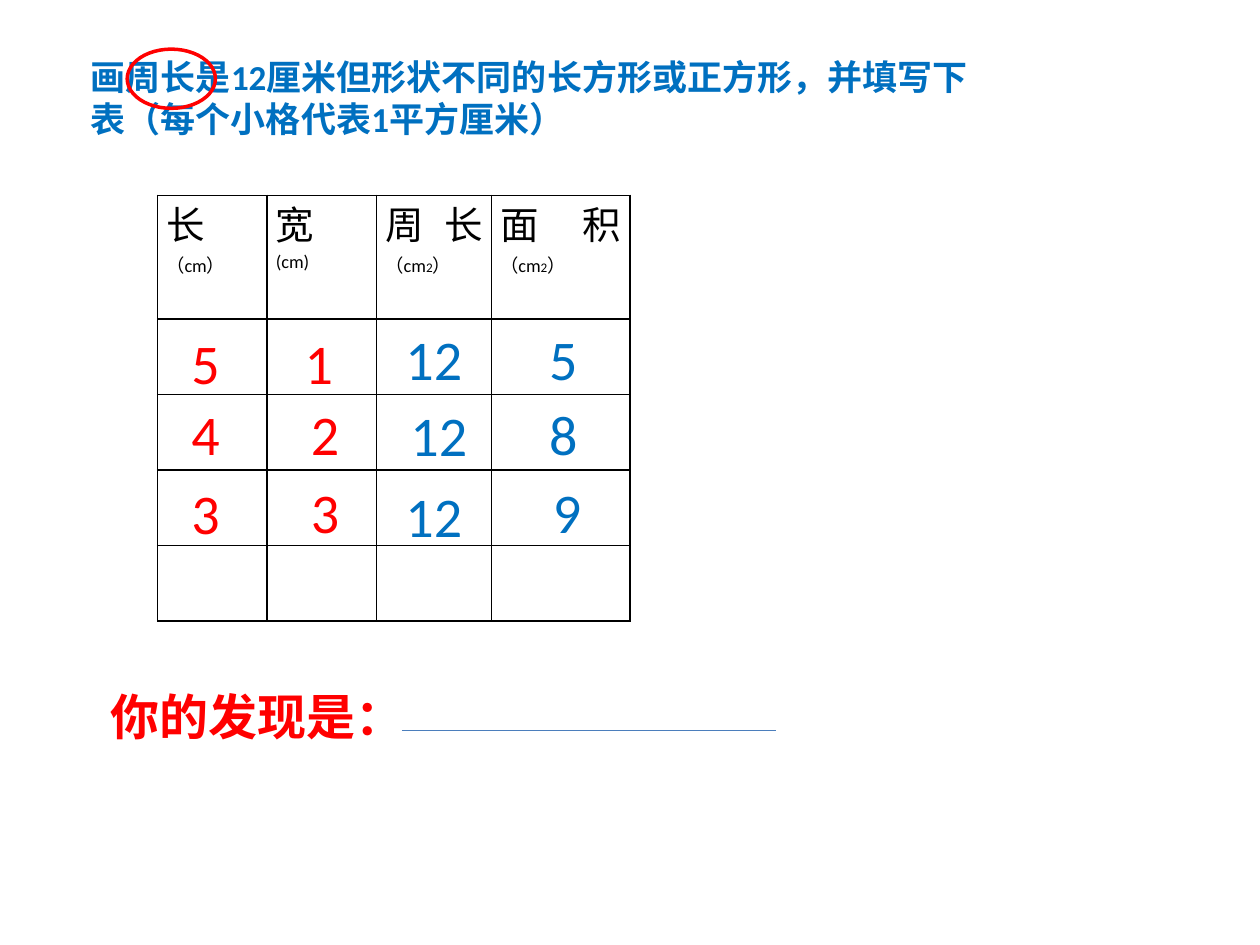
from dataclasses import dataclass

from lxml import etree
from pptx import Presentation
from pptx.dml.color import RGBColor
from pptx.enum.shapes import MSO_CONNECTOR, MSO_SHAPE
from pptx.enum.text import MSO_ANCHOR, MSO_AUTO_SIZE, PP_ALIGN
from pptx.oxml.ns import qn
from pptx.util import Inches, Pt

STRAIGHT = MSO_CONNECTOR.STRAIGHT
OVAL = MSO_SHAPE.OVAL
TOP = MSO_ANCHOR.TOP
NO_AUTOFIT = MSO_AUTO_SIZE.NONE
LEFT, JUSTIFY = PP_ALIGN.LEFT, PP_ALIGN.JUSTIFY
TITLE_ONLY = 5


@dataclass(frozen=True)
class Theme:
    font: str = "Calibri"
    blue: str = "0070C0"
    red: str = "FF0000"
    black: str = "000000"
    rule: str = "4B7EBC"
    title: float = 20
    finding: float = 28
    answer: float = 32
    heading: float = 22
    unit: float = 10.5
    exponent: float = 7.5


THEME = Theme()

COLUMN_WIDTHS = (0.87, 0.87, 0.91, 1.1)
ROW_HEIGHTS = (0.98, 0.6, 0.6, 0.6, 0.6)

SQUARE_CM = [("（cm", THEME.unit), ("2", THEME.exponent), ("）", THEME.unit)]
# Each heading is a list of paragraphs, each paragraph a list of (text, size).
HEADINGS = [
    [[("长", THEME.heading), ("（cm）", THEME.unit)]],
    [[("宽", THEME.heading)], [("(cm)", THEME.unit)]],
    [[("周长", THEME.heading)] + SQUARE_CM],
    [[("面积", THEME.heading)] + SQUARE_CM],
]

# Each answer is (text, left, top); the columns are length, width, perimeter, area.
ANSWERS = [
    [("5", 1.42, 2.56), ("1", 2.32, 2.56), ("12", 3.12, 2.53), ("5", 4.26, 2.53)],
    [("4", 1.42, 3.12), ("2", 2.37, 3.12), ("12", 3.16, 3.13), ("8", 4.26, 3.12)],
    [("3", 1.42, 3.75), ("3", 2.37, 3.74), ("12", 3.12, 3.77), ("9", 4.29, 3.74)],
]
ANSWER_COLORS = (THEME.red, THEME.red, THEME.blue, THEME.blue)


def write(paragraph, text, *, size, color=THEME.black, bold=False, align=LEFT):
    paragraph.alignment = align
    run = paragraph.add_run()
    run.text = text
    run.font.name = THEME.font
    run.font.size = Pt(size)
    run.font.bold = bold
    run.font.color.rgb = RGBColor.from_string(color)


def add_title(slide, text):
    title = slide.shapes.title
    title.left, title.top = Inches(0.62), Inches(0.39)
    title.width, title.height = Inches(7.27), Inches(0.77)
    frame = title.text_frame
    frame.auto_size = NO_AUTOFIT
    frame.vertical_anchor = TOP
    write(frame.paragraphs[0], text, size=THEME.title, color=THEME.blue, bold=True)


def add_text(slide, text, left, top, width, height, *, wrap=False, **style):
    box = slide.shapes.add_textbox(
        Inches(left), Inches(top), Inches(width), Inches(height))
    box.text_frame.word_wrap = wrap
    write(box.text_frame.paragraphs[0], text, **style)


def set_borders(cell):
    properties = cell._tc.get_or_add_tcPr()
    for position, side in enumerate(("a:lnL", "a:lnR", "a:lnT", "a:lnB")):
        border = etree.Element(qn(side), w=str(Pt(1)))
        fill = etree.SubElement(border, qn("a:solidFill"))
        etree.SubElement(fill, qn("a:srgbClr"), val=THEME.black)
        properties.insert(position, border)


def fill_heading(cell, paragraphs):
    cell.margin_left = cell.margin_right = Inches(0.07)
    cell.margin_top = cell.margin_bottom = 0
    frame = cell.text_frame
    for index, parts in enumerate(paragraphs):
        paragraph = frame.add_paragraph() if index else frame.paragraphs[0]
        for text, size in parts:
            write(paragraph, text, size=size, align=JUSTIFY)


def add_measure_table(slide):
    table = slide.shapes.add_table(
        len(ROW_HEIGHTS), len(COLUMN_WIDTHS), Inches(1.25), Inches(1.55),
        Inches(sum(COLUMN_WIDTHS)), Inches(sum(ROW_HEIGHTS))).table
    table.first_row = table.horz_banding = False
    for column, width in zip(table.columns, COLUMN_WIDTHS):
        column.width = Inches(width)
    for row, height in zip(table.rows, ROW_HEIGHTS):
        row.height = Inches(height)
    for cell in table.iter_cells():
        cell.fill.background()
        set_borders(cell)
    for cell, paragraphs in zip(table.rows[0].cells, HEADINGS):
        fill_heading(cell, paragraphs)


def add_answers(slide):
    for row in ANSWERS:
        for (text, left, top), color in zip(row, ANSWER_COLORS):
            width = 0.43 if len(text) == 1 else 0.66
            add_text(slide, text, left, top, width, 0.64,
                     size=THEME.answer, color=color)


def add_blank_line(slide, left, right, y):
    line = slide.shapes.add_connector(
        STRAIGHT, Inches(left), Inches(y), Inches(right), Inches(y))
    line.line.color.rgb = RGBColor.from_string(THEME.rule)
    line.line.width = Pt(0.75)
    etree.SubElement(line._element.spPr, qn("a:effectLst"))


def add_ring(slide, left, top, width, height):
    ring = slide.shapes.add_shape(
        OVAL, Inches(left), Inches(top), Inches(width), Inches(height))
    ring.shadow.inherit = False
    ring.fill.background()
    ring.line.color.rgb = RGBColor.from_string(THEME.red)
    ring.line.width = Pt(2)


def main():
    deck = Presentation()
    deck.slide_width, deck.slide_height = Inches(10), Inches(7.5)
    slide = deck.slides.add_slide(deck.slide_layouts[TITLE_ONLY])

    add_title(slide, "画周长是12厘米但形状不同的长方形或正方形，并填写下表（每个小格代表1平方厘米）")
    add_measure_table(slide)
    add_text(slide, "你的发现是：", 0.78, 5.4, 3.59, 0.57, wrap=True,
             size=THEME.finding, color=THEME.red, bold=True)
    add_blank_line(slide, 3.19, 6.16, 5.8)
    add_ring(slide, 1.01, 0.39, 0.7, 0.47)
    add_answers(slide)
    deck.save("out.pptx")


if __name__ == "__main__":
    main()
